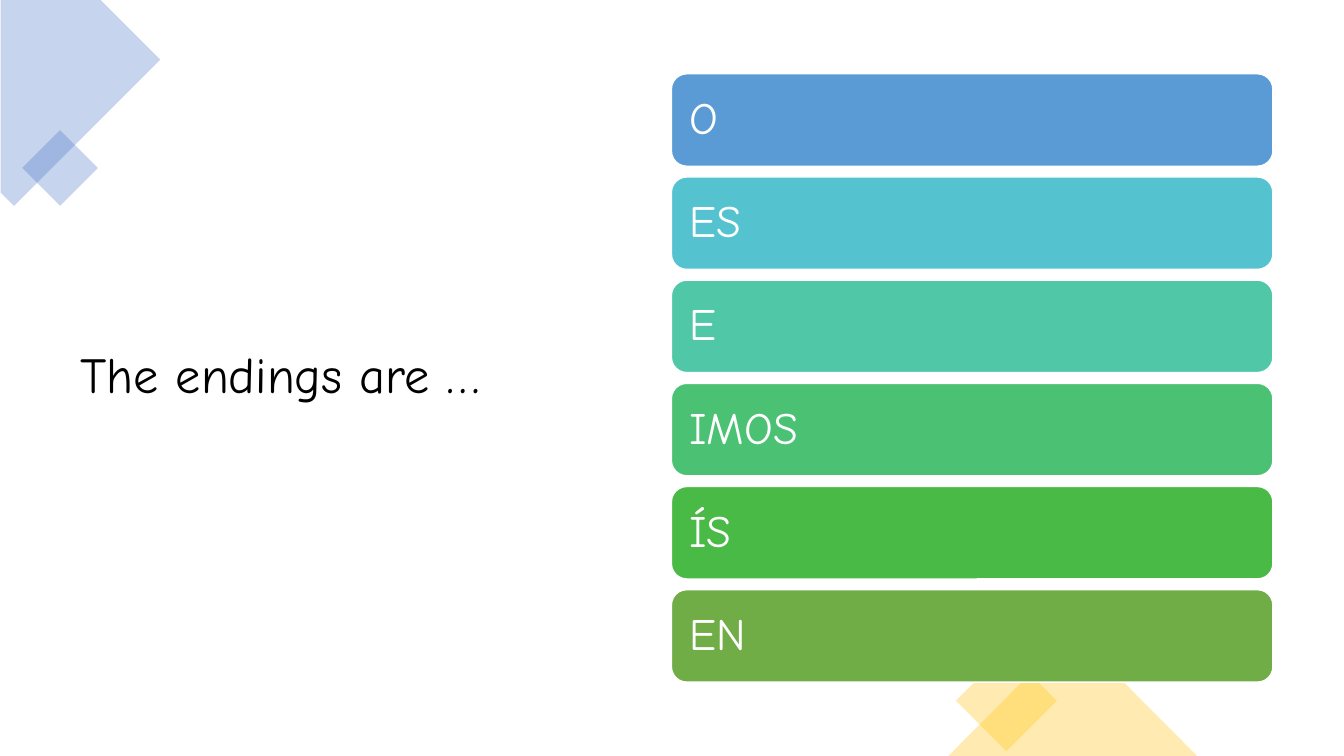
from dataclasses import dataclass

from lxml import etree
from pptx import Presentation
from pptx.dml.color import RGBColor
from pptx.enum.shapes import MSO_SHAPE
from pptx.enum.text import MSO_ANCHOR, PP_ALIGN
from pptx.oxml.ns import qn
from pptx.util import Cm, Pt

ROUNDED = MSO_SHAPE.ROUNDED_RECTANGLE
RECTANGLE = MSO_SHAPE.RECTANGLE
TRIANGLE = MSO_SHAPE.ISOSCELES_TRIANGLE
MIDDLE = MSO_ANCHOR.MIDDLE
LEFT = PP_ALIGN.LEFT


@dataclass(frozen=True)
class Theme:
    """Colours, font and type sizes of the slide."""
    font: str = "Comic Neue"
    title_size: int = 36
    ending_size: int = 32
    line_spacing: float = 0.9
    ink: str = "000000"
    white: str = "FFFFFF"
    blue: str = "4472C4"
    gold: str = "FFC000"
    accent_opacity: int = 30
    bars: tuple = ("5B9BD5", "55C3CF", "50C8A7", "4BC174", "4ABA46", "70AD47")


class SlideBuilder:
    """Draws styled elements on one slide."""

    def __init__(self, page, theme):
        self.page = page
        self.theme = theme

    def add_text(self, shape, text, size, color):
        """Put one line of text into a shape."""
        frame = shape.text_frame
        frame.word_wrap = True
        frame.vertical_anchor = MIDDLE
        para = frame.paragraphs[0]
        para.alignment = LEFT
        para.line_spacing = self.theme.line_spacing
        span = para.add_run()
        span.text = text
        span.font.name = self.theme.font
        span.font.size = Pt(size)
        span.font.color.rgb = RGBColor.from_string(color)

    def title(self, text, left, top, width, height):
        """Add the slide title."""
        box = self.page.shapes.add_textbox(Cm(left), Cm(top), Cm(width), Cm(height))
        self.add_text(box, text, self.theme.title_size, self.theme.ink)

    def tint(self, shape, color, rotation):
        """Give a corner shape its translucent fill and rotation."""
        shape.shadow.inherit = False
        shape.rotation = rotation
        shape.line.fill.background()
        shape.fill.solid()
        shape.fill.fore_color.rgb = RGBColor.from_string(color)
        tone = shape.element.spPr.find(qn("a:solidFill"))[0]
        alpha = etree.SubElement(tone, qn("a:alpha"))
        alpha.set("val", str(self.theme.accent_opacity * 1000))

    def accent(self, kind, color, left, top, width, height, rotation=0):
        """Add a translucent preset shape."""
        shape = self.page.shapes.add_shape(kind, Cm(left), Cm(top), Cm(width), Cm(height))
        self.tint(shape, color, rotation)

    def outline(self, points, color, left, top, rotation=0):
        """Add a translucent polygon."""
        corners = [(Cm(x), Cm(y)) for x, y in points]
        pen = self.page.shapes.build_freeform(*corners[0])
        pen.add_line_segments(corners[1:], close=True)
        self.tint(pen.convert_to_shape(Cm(left), Cm(top)), color, rotation)

    def bar(self, text, color, left, top, width, height):
        """Add a rounded bar holding one verb ending."""
        shape = self.page.shapes.add_shape(ROUNDED, Cm(left), Cm(top), Cm(width), Cm(height))
        shape.shadow.inherit = False
        shape.fill.solid()
        shape.fill.fore_color.rgb = RGBColor.from_string(color)
        shape.line.color.rgb = RGBColor.from_string(self.theme.white)
        shape.line.width = Pt(1)
        shape.text_frame.margin_left = Cm(0.34)
        self.add_text(shape, text, self.theme.ending_size, self.theme.white)


def main():
    """Build and save the verb endings slide."""
    deck = Presentation()
    deck.slide_width, deck.slide_height = Cm(33.87), Cm(19.05)
    theme = Theme()
    builder = SlideBuilder(deck.slides.add_slide(deck.slide_layouts[6]), theme)

    builder.title("The endings are …", 1.78, 1.78, 13.34, 15.47)
    corner = [(0, 1.78), (1.78, 0), (3.91, 0), (3.91, 5.21), (3.43, 5.21)]
    builder.outline(corner, theme.blue, -1.14, -0.64, rotation=45)
    builder.accent(RECTANGLE, theme.blue, 0.84, 3.56, 1.35, 1.35, rotation=45)
    builder.accent(RECTANGLE, theme.gold, 24.46, 16.76, 1.8, 1.8, rotation=45)
    builder.accent(TRIANGLE, theme.gold, 23.9, 15.9, 6.27, 3.15)

    endings = ("O", "ES", "E", "IMOS", "ÍS", "EN")
    for row, (ending, color) in enumerate(zip(endings, theme.bars)):
        builder.bar(ending, color, 16.92, 1.86 + row * 2.6, 15.16, 2.33)

    deck.save("out.pptx")


if __name__ == "__main__":
    main()
